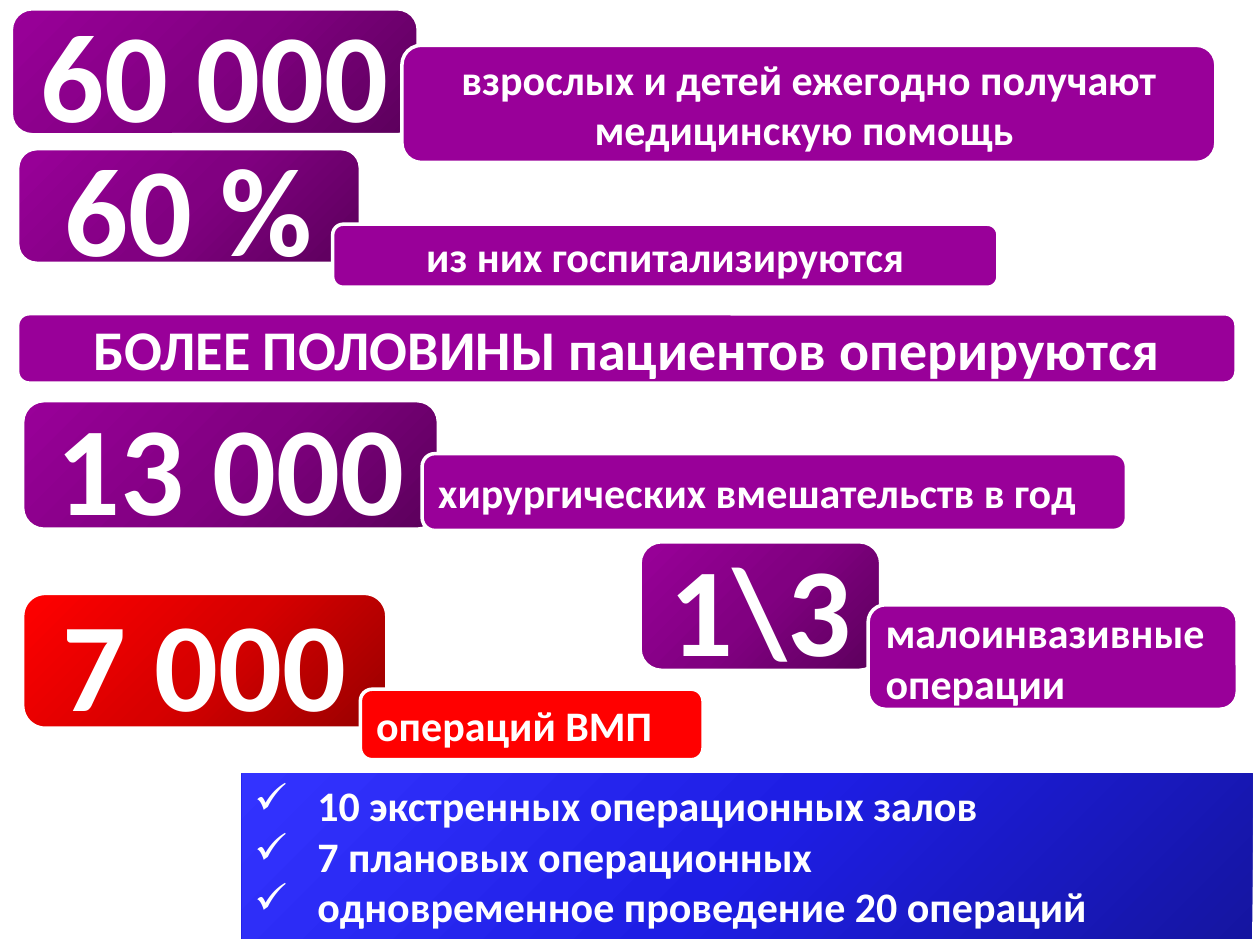
from copy import deepcopy
from dataclasses import dataclass

from lxml import etree
from pptx import Presentation
from pptx import util as u
from pptx.dml.color import RGBColor
from pptx.enum import shapes, text
from pptx.oxml.ns import qn

HUES = {
    "white": "FFFFFF",
    "plum": "990099",
    "red": "FF0000",
}
FADES = {
    "plum": ("5B005B", "810081", "990099"),
    "red": ("970000", "D70000", "FF0000"),
    "blue": ("1515A0", "1E1EE4", "3333FF"),
}
FONT = "Calibri"
MID = text.PP_ALIGN.CENTER
LEFT = text.PP_ALIGN.LEFT


@dataclass
class Card:
    words: str
    left: float
    top: float
    width: float
    height: float
    hue: str = "plum"
    size: int = 24
    align: text.PP_ALIGN = MID
    fade: bool = False


def figure(words: str, left: float, top: float, width: float,
           height: float, hue: str = "plum") -> Card:
    return Card(words, left, top, width, height, hue, size=72, fade=True)


CARDS = [
    figure("60 000", 0.09, 0.07, 3.23, 1),
    Card("взрослых и детей ежегодно получают медицинскую помощь ",
         3.19, 0.36, 6.46, 0.93),
    figure("60 %", 0.14, 1.18, 2.72, 0.91),
    Card("из них госпитализируются", 2.64, 1.78, 5.28, 0.5),
    Card("БОЛЕЕ ПОЛОВИНЫ пациентов оперируются",
         0.14, 2.49, 9.67, 0.55, size=32),
    figure("13 000", 0.18, 3.18, 3.3, 1.02),
    figure("1\\3", 5.08, 4.3, 1.91, 1.02),
    Card("малоинвазивные операции", 6.89, 4.8, 2.93, 0.83, align=LEFT),
    Card("хирургических вмешательств в год",
         3.35, 3.6, 5.59, 0.61, align=LEFT),
    figure("7 000", 0.18, 4.71, 2.89, 1.07, "red"),
]
ROOMS = Card("", 1.92, 6.14, 8.02, 1.31, "blue", align=LEFT, fade=True)
FACTS = [
    "10 экстренных операционных залов",
    "7 плановых операционных",
    "одновременное проведение 20 операций",
]
HITECH = Card("операций ВМП", 2.86, 5.47, 2.72, 0.56, "red", align=LEFT)


def shade(shape, hue: str) -> None:
    fill = shape.fill
    fill.gradient()
    fill.gradient_angle = 135
    stops = shape._element.spPr.find(qn("a:gradFill")).find(qn("a:gsLst"))
    stops.insert(1, deepcopy(stops[0]))
    for stop, tone, place in zip(fill.gradient_stops, FADES[hue], (0, 0.5, 1)):
        stop.color.rgb = RGBColor.from_string(tone)
        stop.position = place


def block(slide, card: Card, kind: shapes.MSO_SHAPE):
    shape = slide.shapes.add_shape(
        kind, u.Inches(card.left), u.Inches(card.top),
        u.Inches(card.width), u.Inches(card.height))
    shape.shadow.inherit = False
    if card.fade:
        shade(shape, card.hue)
    else:
        shape.fill.solid()
        shape.fill.fore_color.rgb = RGBColor.from_string(HUES[card.hue])
    shape.text_frame.word_wrap = True
    return shape


def write(para, words: str, card: Card) -> None:
    para.alignment = card.align
    run = para.add_run()
    run.text = words
    run.font.name = FONT
    run.font.size = u.Pt(card.size)
    run.font.bold = True
    run.font.color.rgb = RGBColor.from_string(HUES["white"])


def draw_card(slide, card: Card) -> None:
    shape = block(slide, card, shapes.MSO_SHAPE.ROUNDED_RECTANGLE)
    shape.line.color.rgb = RGBColor.from_string(HUES["white"])
    shape.line.width = u.Pt(2)
    frame = shape.text_frame
    frame.vertical_anchor = text.MSO_ANCHOR.MIDDLE
    write(frame.paragraphs[0], card.words, card)


def draw_list(slide, card: Card, facts: list[str]) -> None:
    shape = block(slide, card, shapes.MSO_SHAPE.RECTANGLE)
    shape.line.fill.background()
    frame = shape.text_frame
    frame.vertical_anchor = text.MSO_ANCHOR.TOP
    frame.auto_size = text.MSO_AUTO_SIZE.SHAPE_TO_FIT_TEXT
    for i, fact in enumerate(facts):
        para = frame.add_paragraph() if i else frame.paragraphs[0]
        write(para, fact, card)
        props = para._p.get_or_add_pPr()
        props.set("marL", str(u.Inches(0.5)))
        props.set("indent", str(u.Inches(-0.5)))
        etree.SubElement(props, qn("a:buChar")).set("char", "✓")


def main() -> None:
    deck = Presentation()
    deck.slide_width = u.Inches(10)
    deck.slide_height = u.Inches(7.5)
    slide = deck.slides.add_slide(deck.slide_layouts[6])
    for card in CARDS:
        draw_card(slide, card)
    draw_list(slide, ROOMS, FACTS)
    draw_card(slide, HITECH)
    deck.save("out.pptx")


if __name__ == "__main__":
    main()
